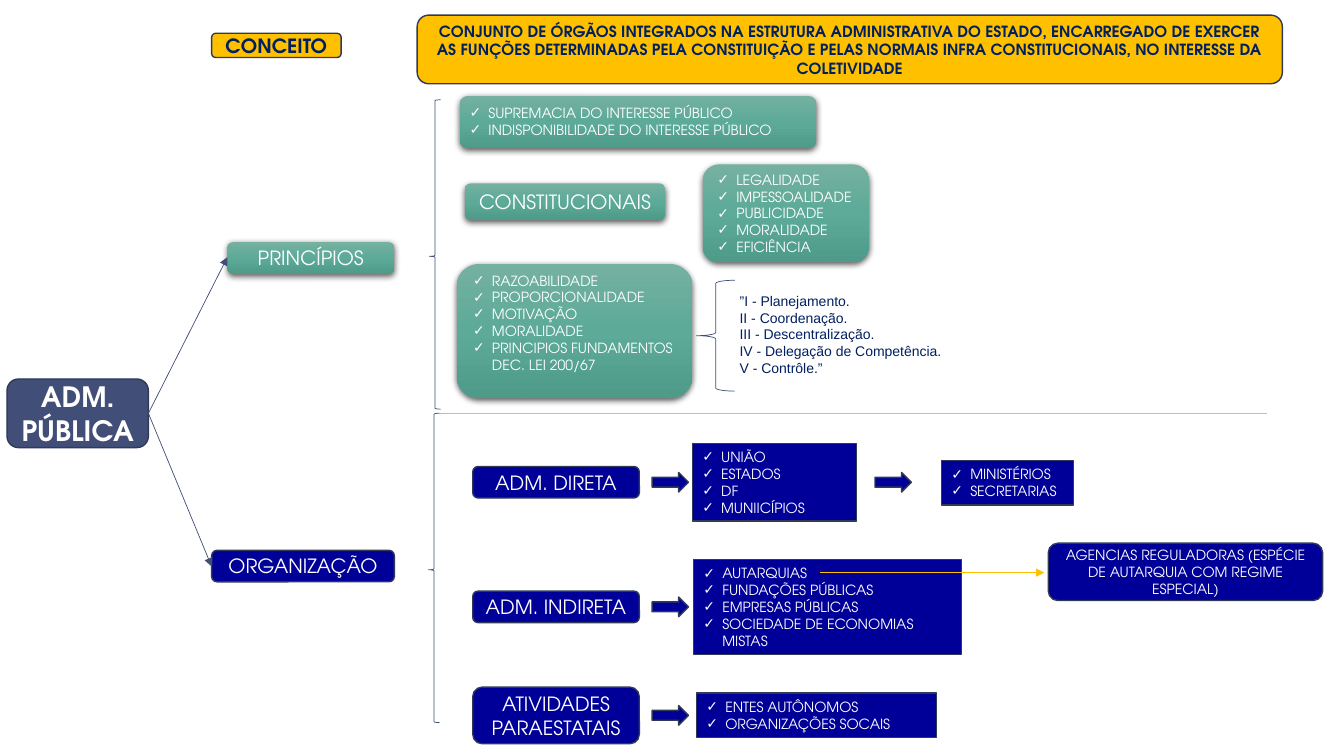
from copy import deepcopy
from pptx import Presentation
from pptx.util import Pt
from pptx.dml.color import RGBColor
from pptx.enum.shapes import MSO_SHAPE, MSO_CONNECTOR
from pptx.enum.text import MSO_ANCHOR, PP_ALIGN
from pptx.oxml import parse_xml
from pptx.oxml.ns import qn, nsdecls
from lxml.etree import SubElement

NAVY = RGBColor(0x00, 0x00, 0x99)
SLATE = RGBColor(0x41, 0x4E, 0x77)
EDGE = RGBColor(0x30, 0x3A, 0x58)
GOLD = RGBColor(0xFF, 0xC0, 0x00)
INK = RGBColor(0x00, 0x20, 0x60)
WHITE = RGBColor(0xFF, 0xFF, 0xFF)
GREENS = [RGBColor(0x75, 0xB1, 0xA1), RGBColor(0x5D, 0xAA, 0x98), RGBColor(0x4F, 0x9B, 0x89)]
FACE = "TeX Gyre Adventor"
ROUND = MSO_SHAPE.ROUNDED_RECTANGLE
SHADOW = (f'<a:effectLst {nsdecls("a")}><a:outerShdw blurRad="57150" dist="19050" dir="5400000" '
          'algn="ctr" rotWithShape="0"><a:srgbClr val="000000"><a:alpha val="63000"/>'
          '</a:srgbClr></a:outerShdw></a:effectLst>')

deck = Presentation()
deck.slide_width, deck.slide_height = Pt(960), Pt(540)
slide = deck.slides.add_slide(deck.slide_layouts[6])
shapes = slide.shapes


def add_box(kind, place, lines=(), size=10, fill=None, color=WHITE, bold=False, check=False):
    place = [Pt(n) for n in place]
    if kind is None:
        box = shapes.add_textbox(*place)
    else:
        box = shapes.add_shape(kind, *place)
        box.shadow.inherit = False
        if fill is None:
            box.fill.background()
        else:
            box.fill.solid()
            box.fill.fore_color.rgb = fill
        box.line.color.rgb = EDGE
        box.line.width = Pt(1)
    frame = box.text_frame
    frame.word_wrap = True
    frame.vertical_anchor = MSO_ANCHOR.TOP if kind is None else MSO_ANCHOR.MIDDLE
    for i, line in enumerate(lines):
        para = frame.add_paragraph() if i else frame.paragraphs[0]
        para.text = line
        para.alignment = PP_ALIGN.LEFT if check else PP_ALIGN.CENTER
        if check:
            props = para._p.get_or_add_pPr()
            props.set("marL", str(Pt(13.5)))
            props.set("indent", str(-Pt(13.5)))
            SubElement(props, qn("a:buFont")).set("typeface", "Arial")
            SubElement(props, qn("a:buChar")).set("char", "✓")
        font = para.font
        font.name, font.size, font.bold = FACE, Pt(size), bold
        font.color.rgb = color
    return box


def add_link(start, end, color, arrow=True):
    link = shapes.add_connector(MSO_CONNECTOR.STRAIGHT, *[Pt(n) for n in start + end])
    link.line.color.rgb = color
    link.line.width = Pt(0.5)
    if arrow:
        SubElement(link.line._get_or_add_ln(), qn("a:tailEnd")).set("type", "triangle")
    SubElement(link._element.spPr, qn("a:effectLst"))


add_box(ROUND, (5, 270.7, 101, 49), ["ADM. PÚBLICA"], 20, SLATE, bold=True)
add_box(ROUND, (298, 10.8, 618, 49), [
    "CONJUNTO DE ÓRGÃOS INTEGRADOS NA ESTRUTURA ADMINISTRATIVA DO ESTADO, "
    "ENCARREGADO DE EXERCER AS FUNÇÕES DETERMINADAS PELA CONSTITUIÇÃO E PELAS "
    "NORMAIS INFRA CONSTITUCIONAIS, NO INTERESSE DA COLETIVIDADE"], 11, GOLD, INK, True)
add_box(ROUND, (151.2, 23.8, 92.5, 17.3), ["CONCEITO"], 14, GOLD, INK, True)

greens = [
    ((162.5, 173, 119, 22.5), ["PRINCÍPIOS"], 14, False),
    ((328.3, 68.4, 255, 37.5), [], 10, False),
    ((502, 117.4, 119, 70), ["LEGALIDADE", "IMPESSOALIDADE", "PUBLICIDADE",
                             "MORALIDADE", "EFICIÊNCIA"], 10, True),
    ((332, 131, 143.3, 26), ["CONSTITUCIONAIS"], 14, False),
    ((326.2, 188.6, 168.5, 95.8), ["RAZOABILIDADE", "PROPORCIONALIDADE", "MOTIVAÇÃO", "MORALIDADE",
                                   "PRINCIPIOS FUNDAMENTOS DEC. LEI 200/67"], 10, True),
]
for place, lines, size, check in greens:
    box = add_box(ROUND, place, lines, size, GREENS[0], check=check)
    box.line.fill.background()
    box.fill.gradient()
    box.fill.gradient_angle = 270
    stops = box._element.spPr.find(".//" + qn("a:gsLst"))
    stops.insert(1, deepcopy(stops[0]))
    for i, stop in enumerate(box.fill.gradient_stops):
        stop.color.rgb = GREENS[i]
        stop.position = i / 2
    props = box._element.spPr
    props.replace(props.find(qn("a:effectLst")), parse_xml(SHADOW))
box.text_frame.margin_bottom = Pt(15.6)

add_box(None, (328.3, 71.3, 241, 44), ["SUPREMACIA DO INTERESSE PÚBLICO",
                                       "INDISPONIBILIDADE DO INTERESSE PÚBLICO"], check=True)
plan = add_box(None, (515.5, 205.2, 171.4, 67.7), [
    "”I - Planejamento.", "II - Coordenação.", "III - Descentralização.",
    "IV - Delegação de Competência.", "V - Contrôle.”"], color=INK)
plan.text_frame.margin_left = Pt(12.8)
for para in plan.text_frame.paragraphs:
    para.font.name = "Arial"
    para.alignment = PP_ALIGN.JUSTIFY

for place, mid in [((306.7, 71.3, 8, 221), 0.506), ((306, 295.2, 8, 221), 0.506),
                   ((497.5, 200.2, 27.4, 79.2), 0.5)]:
    brace = add_box(MSO_SHAPE.LEFT_BRACE, place)
    brace.adjustments[0], brace.adjustments[1] = 0.083, mid
    brace.line.color.rgb = SLATE
    brace.line.width = Pt(0.5)

add_box(ROUND, (151.2, 393.1, 130.5, 22.5), ["ORGANIZAÇÃO"], 14, NAVY)
rows = [
    (344.5, "ADM. DIRETA", 22.5, (494.6, 117.4, 55.4), ["UNIÃO", "ESTADOS", "DF", "MUNIICÍPIOS"]),
    (433.5, "ADM. INDIRETA", 22.5, (495.4, 191.5, 67.7),
     ["AUTARQUIAS", "FUNDAÇÕES PÚBLICAS", "EMPRESAS PÚBLICAS", "SOCIEDADE DE ECONOMIAS MISTAS"]),
    (511, "ATIVIDADES PARAESTATAIS", 40.5, (497.5, 171.4, 31.7),
     ["ENTES AUTÔNOMOS", "ORGANIZAÇÕES SOCAIS"]),
]
arrows = [(625, rows[0][0])]
for mid, name, tall, (left, wide, high), lines in rows:
    add_box(ROUND, (337.7, mid - tall / 2, 119, tall), [name], 14, NAVY)
    add_box(MSO_SHAPE.RECTANGLE, (left, mid - high / 2, wide, high), lines, fill=NAVY, check=True)
    arrows.append((465.8, mid))
for left, mid in arrows:
    add_box(MSO_SHAPE.RIGHT_ARROW, (left, mid - 7, 26, 14), fill=NAVY)
add_box(MSO_SHAPE.RECTANGLE, (672.5, 329, 94.3, 31.7), ["MINISTÉRIOS", "SECRETARIAS"],
        fill=NAVY, check=True)
add_box(ROUND, (748.8, 388, 196, 41), [
    "AGENCIAS REGULADORAS (ESPÉCIE DE AUTARQUIA COM REGIME ESPECIAL)"], fill=NAVY)

add_link((585.4, 409), (746, 409), GOLD)
for end in [(162.5, 183.6), (151.2, 404.6)]:
    add_link((106, 295.2), end, SLATE)
add_link((314.6, 295.2), (905, 295.2), GOLD, arrow=False)

deck.save("out.pptx")
